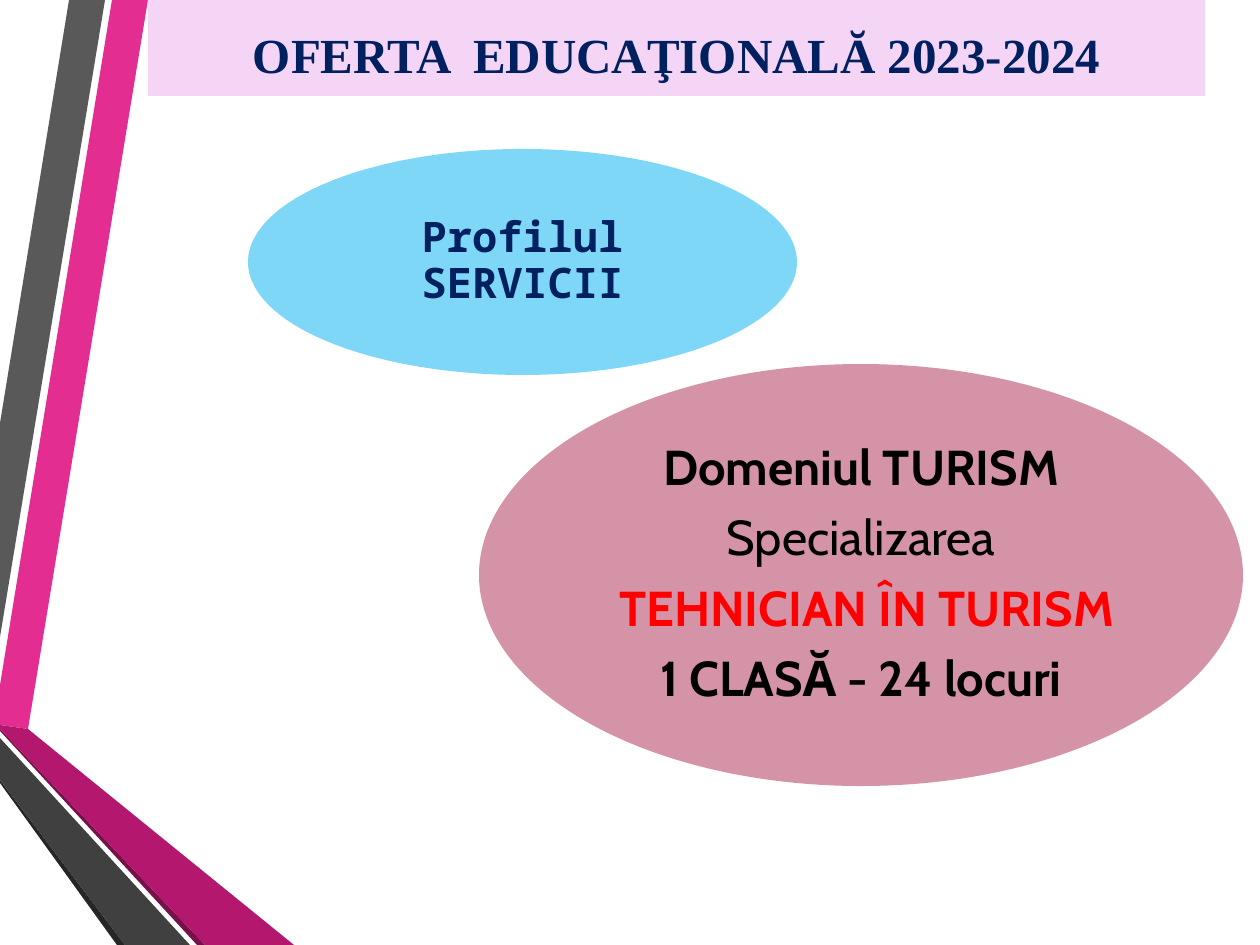
from lxml import etree
from pptx import Presentation, util as u
from pptx.dml.color import RGBColor
from pptx.enum import shapes, text
from pptx.oxml.ns import qn

NAVY = RGBColor(0x00, 0x20, 0x60)
BLACK = RGBColor(0x00, 0x00, 0x00)
RED = RGBColor(0xFF, 0x00, 0x00)
LILAC = RGBColor(0xF4, 0xD5, 0xF5)
SKY = RGBColor(0x00, 0xB0, 0xF0)
WINE = RGBColor(0xAD, 0x28, 0x51)
PINK = RGBColor(0xE3, 0x2D, 0x91)
MAGENTA = RGBColor(0xB4, 0x18, 0x6E)
PLUM = RGBColor(0x78, 0x10, 0x49)
GREY = RGBColor(0x59, 0x59, 0x59)
DARK = RGBColor(0x40, 0x40, 0x40)
DARKER = RGBColor(0x26, 0x26, 0x26)

WIDTH, HEIGHT = 1260, 945
PX = u.Inches(1) / 126

RIBBONS = [
    (PINK, [(0, 685), (0, 725), (28, 729), (148, 0), (112, 0)]),
    (GREY, [(105, 0), (69, 0), (0, 423), (0, 637)]),
    (DARKER, [(0, 780), (0, 783), (117, HEIGHT), (125, HEIGHT)]),
    (PLUM, [(0, 729), (0, 731), (197, HEIGHT), (205, HEIGHT)]),
    (MAGENTA, [(0, 729), (205, HEIGHT), (294, HEIGHT), (28, 729), (0, 725)]),
    (DARK, [(0, 780), (125, HEIGHT), (190, HEIGHT), (0, 738)]),
]

TITLE = [("OFERTA  EDUCAŢIONALĂ 2023-2024", NAVY, True)]
PROFILE = [("Profilul SERVICII", NAVY, True)]
DOMAIN = [
    ("Domeniul TURISM", BLACK, True),
    ("Specializarea", BLACK, False),
    (" TEHNICIAN ÎN TURISM", RED, True),
    ("1 CLASĂ - 24 locuri", BLACK, True),
]


def px(value):
    return u.Emu(round(value * PX))


def paint(shape, color, opacity=100):
    shape.shadow.inherit = False
    shape.fill.solid()
    shape.fill.fore_color.rgb = color
    shape.line.fill.background()
    if opacity < 100:
        solid = shape.fill._xPr.find(qn("a:solidFill"))
        alpha = etree.SubElement(solid[0], qn("a:alpha"))
        alpha.set("val", str(opacity * 1000))


def add_ribbon(page, color, points):
    builder = page.shapes.build_freeform(*points[0], scale=PX)
    builder.add_line_segments(points[1:], close=True)
    paint(builder.convert_to_shape(), color)


def add_panel(page, kind, bounds, color, opacity=100):
    shape = page.shapes.add_shape(kind, *map(px, bounds))
    paint(shape, color, opacity)
    return shape


def write(shape, lines, *, font, size, inset=4, top=None, spacing=1.0, after=0):
    frame = shape.text_frame
    frame.word_wrap = True
    frame.vertical_anchor = text.MSO_ANCHOR.MIDDLE
    frame.margin_left = frame.margin_right = frame.margin_bottom = px(inset)
    frame.margin_top = px(inset if top is None else top)
    for index, (words, color, bold) in enumerate(lines):
        para = frame.add_paragraph() if index else frame.paragraphs[0]
        para.alignment = text.PP_ALIGN.CENTER
        para.line_spacing = spacing
        para.space_after = u.Pt(after)
        span = para.add_run()
        span.text = words
        span.font.name = font
        span.font.size = u.Pt(size)
        span.font.bold = bold
        span.font.color.rgb = color


def main():
    deck = Presentation()
    deck.slide_width, deck.slide_height = px(WIDTH), px(HEIGHT)
    page = deck.slides.add_slide(deck.slide_layouts[6])
    kinds = shapes.MSO_SHAPE

    for color, points in RIBBONS:
        add_ribbon(page, color, points)

    profile = add_panel(page, kinds.OVAL, (248, 149, 549, 226), SKY, opacity=50)
    write(profile, PROFILE, font="Noto Sans Mono", size=24, spacing=0.9, after=8)

    domain = add_panel(page, kinds.OVAL, (479, 364, 764, 422), WINE, opacity=50)
    write(domain, DOMAIN, font="Cabin", size=28, inset=5, spacing=0.9, after=10)

    title = add_panel(page, kinds.RECTANGLE, (148, -4, 1057, 100), LILAC)
    write(title, TITLE, font="Times New Roman", size=28, top=20)

    deck.save("out.pptx")


if __name__ == "__main__":
    main()
